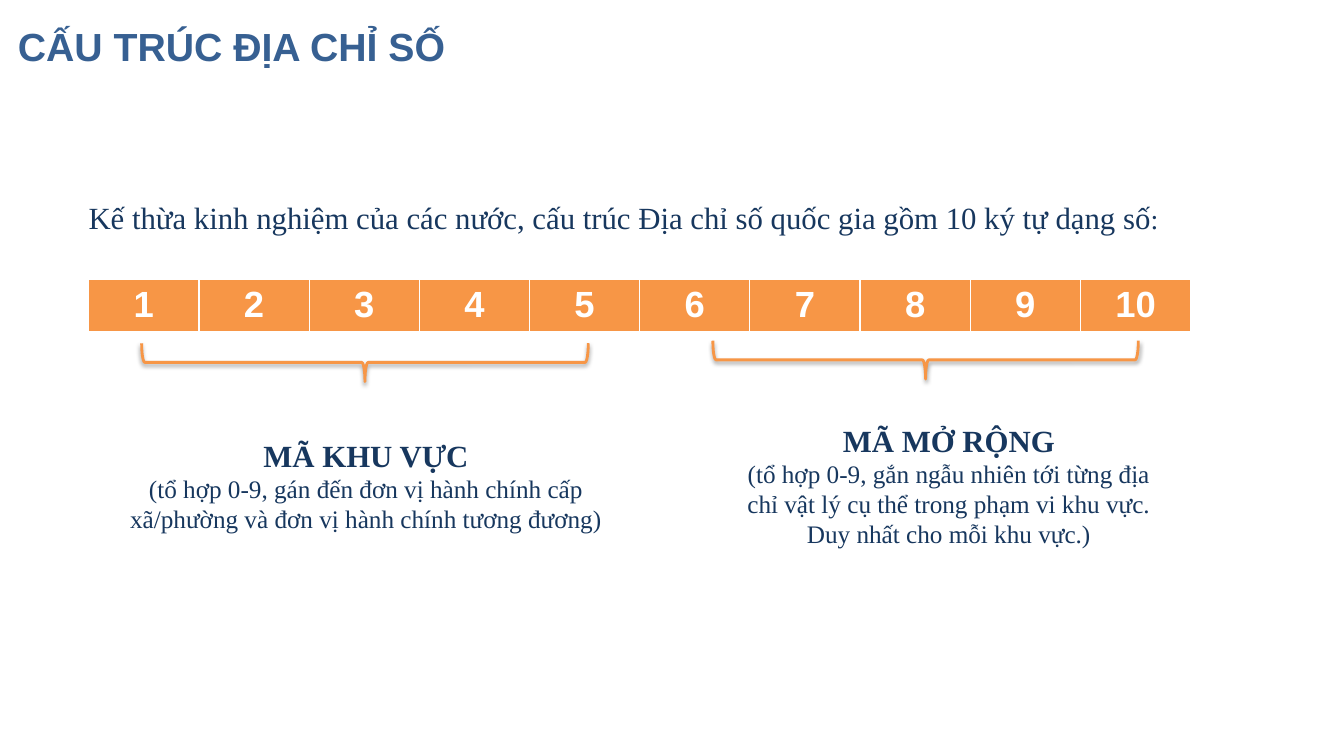
"""Build the slide on the structure of the ten-digit numeric address."""
from typing import Any, NamedTuple

from lxml import etree
from pptx import Presentation, util as u
from pptx.dml import color
from pptx.enum import shapes, text
from pptx.oxml import ns, parse_xml

COLORS = {"title": "376092", "body": "17375E", "accent": "F79646",
          "white": "FFFFFF", "shadow": "000000"}
SERIF = "Times New Roman"
DIGITS = 10


class Box(NamedTuple):
    """A rectangle in inches."""
    x: float
    y: float
    w: float
    h: float

    def emu(self) -> list[int]:
        """Return the rectangle as lengths."""
        return [u.Inches(v) for v in self]


class CodePart(NamedTuple):
    """One part of the address: its brace, heading and explanation."""
    brace: Box
    label: Box
    heading: str
    detail: str


PARTS = [
    CodePart(Box(3.43, 1.38, 0.38, 4.43), Box(1.13, 4.28, 5, 1.08), "MÃ KHU VỰC",
             "(tổ hợp 0-9, gán đến đơn vị hành chính cấp xã/phường "
             "và đơn vị hành chính tương đương)"),
    CodePart(Box(8.99, 1.46, 0.38, 4.22), Box(7.2, 4.13, 4.42, 1.38), "MÃ MỞ RỘNG",
             "(tổ hợp 0-9, gắn ngẫu nhiên tới từng địa chỉ vật lý cụ thể "
             "trong phạm vi khu vực. Duy nhất cho mỗi khu vực.)"),
]


def rgb(name: str) -> color.RGBColor:
    """Look up a colour by name."""
    return color.RGBColor.from_string(COLORS[name])


def add_run(p: Any, words: str, *, size: float, font: str = SERIF,
            fill: str = "body", bold: bool = False) -> None:
    """Append a formatted run to a paragraph."""
    r = p.add_run()
    r.text = words
    r.font.size = u.Pt(size)
    r.font.name = font
    r.font.bold = bold
    r.font.color.rgb = rgb(fill)


def add_box(s: Any, box: Box, anchor: Any = text.MSO_ANCHOR.TOP) -> Any:
    """Add a wrapping text box and return its text frame."""
    tf = s.shapes.add_textbox(*box.emu()).text_frame
    tf.word_wrap = True
    tf.vertical_anchor = anchor
    return tf


def add_border(cell: Any, index: int, side: str, width: float) -> None:
    """Give one side of a cell a white border."""
    ln = etree.Element(ns.qn(f"a:ln{side}"), w=str(u.Pt(width)))
    fill = etree.SubElement(ln, ns.qn("a:solidFill"))
    etree.SubElement(fill, ns.qn("a:srgbClr"), val=COLORS["white"])
    cell._tc.get_or_add_tcPr().insert(index, ln)


def add_digits(s: Any, box: Box) -> None:
    """Add the row of numbered cells."""
    table = s.shapes.add_table(1, DIGITS, *box.emu()).table
    table.horz_banding = False
    for i, cell in enumerate(table.iter_cells()):
        cell.fill.solid()
        cell.fill.fore_color.rgb = rgb("accent")
        for index, (side, width) in enumerate(zip("LRTB", (1, 1, 1, 3))):
            add_border(cell, index, side, width)
        p = cell.text_frame.paragraphs[0]
        p.alignment = text.PP_ALIGN.CENTER
        add_run(p, str(i + 1), size=26, font="Arial", fill="white", bold=True)


def add_part(s: Any, part: CodePart) -> None:
    """Add a brace and the label below it."""
    sp = s.shapes.add_shape(shapes.MSO_SHAPE.LEFT_BRACE, *part.brace.emu())
    sp.rotation = 270
    sp.fill.background()
    sp.line.color.rgb = rgb("accent")
    sp.line.width = u.Pt(2)
    sp._element.spPr.append(parse_xml(
        f'<a:effectLst {ns.nsdecls("a")}><a:outerShdw blurRad="{u.Pt(3.1)}" '
        f'dist="{u.Pt(1.6)}" dir="5400000" rotWithShape="0">'
        f'<a:srgbClr val="{COLORS["shadow"]}"><a:alpha val="38000"/></a:srgbClr>'
        '</a:outerShdw></a:effectLst>'))
    tf = add_box(s, part.label)
    heading, detail = tf.paragraphs[0], tf.add_paragraph()
    heading.alignment = detail.alignment = text.PP_ALIGN.CENTER
    add_run(heading, part.heading, size=22, bold=True)
    add_run(detail, part.detail, size=18)


def main() -> None:
    """Build and save the presentation."""
    prs = Presentation()
    prs.slide_width, prs.slide_height = u.Inches(13.33), u.Inches(7.5)
    s = prs.slides.add_slide(prs.slide_layouts[6])
    title = add_box(s, Box(0.08, 0, 12, 0.91), text.MSO_ANCHOR.MIDDLE)
    add_run(title.paragraphs[0], "CẤU TRÚC ĐỊA CHỈ SỐ", size=28, font="Arial",
            fill="title", bold=True)
    p = add_box(s, Box(0.78, 1.92, 11.5, 0.65)).paragraphs[0]
    add_run(p, "Kế thừa kinh nghiệm của các nước, cấu trúc Địa chỉ số quốc gia "
               "gồm 10 ký tự dạng số", size=22)
    add_run(p, ":", size=20)
    add_digits(s, Box(0.88, 2.77, 10.93, 0.53))
    for part in PARTS:
        add_part(s, part)
    prs.save("out.pptx")


if __name__ == "__main__":
    main()
